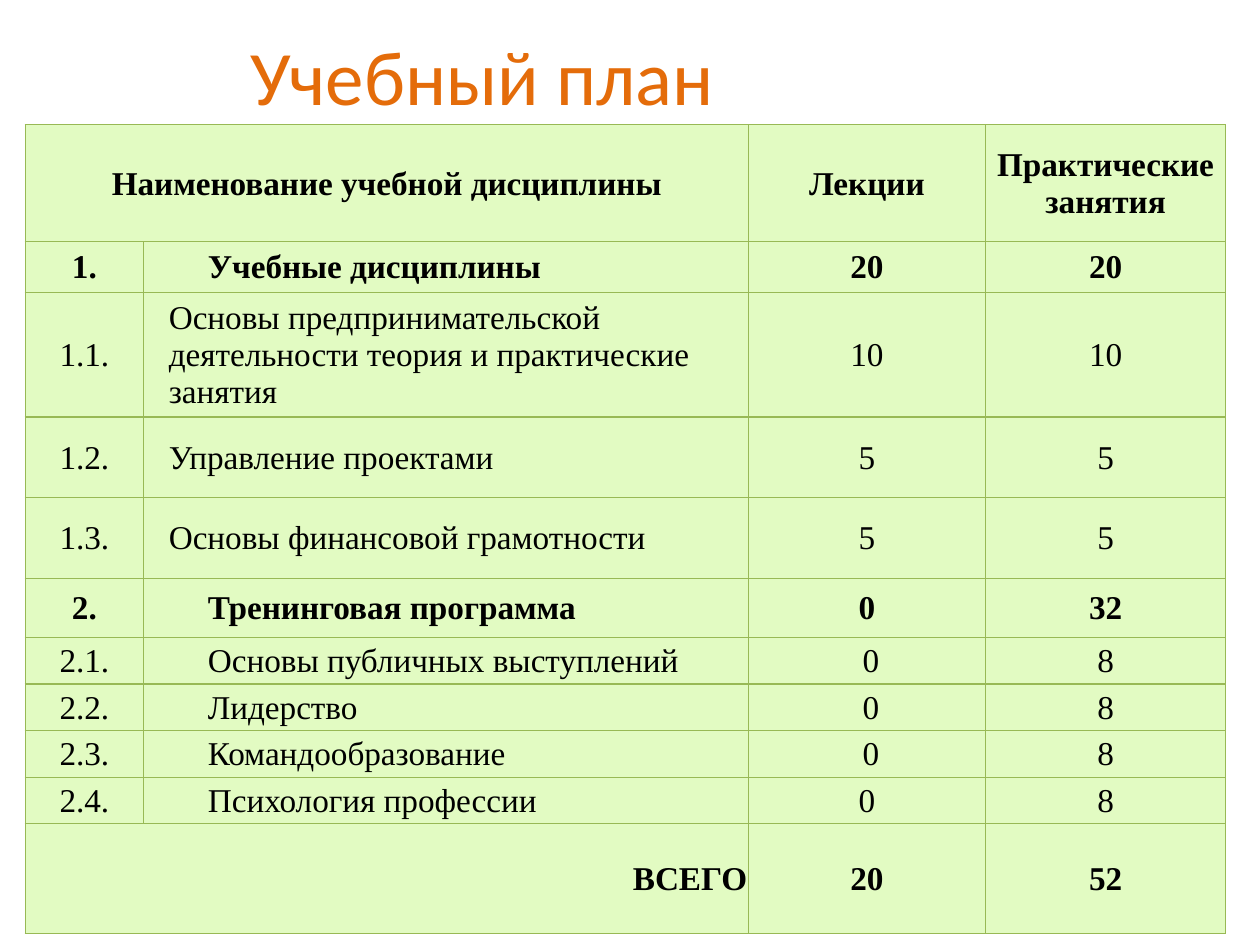
from dataclasses import dataclass

from lxml.etree import SubElement
from pptx import Presentation
from pptx.dml.color import RGBColor
from pptx.enum.text import MSO_ANCHOR, PP_ALIGN
from pptx.oxml.ns import qn
from pptx.util import Inches, Pt


@dataclass(frozen=True)
class Theme:
    title_font: str = "Calibri"
    table_font: str = "Times New Roman"
    title_size: float = 44
    table_size: float = 19
    title_color: str = "E46C0A"
    text_color: str = "000000"
    cell_fill: str = "E2FBC2"
    border_color: str = "98B955"
    border_width: float = 0.75


@dataclass(frozen=True)
class Row:
    number: str
    name: str
    lectures: str
    practice: str
    height: float
    bold: bool = False
    left: float = 0
    first_line: float = 0.5
    align: PP_ALIGN = PP_ALIGN.LEFT

    @property
    def merged(self) -> bool:
        return not self.number


THEME = Theme()
COL_WIDTHS = (0.94, 4.8, 1.88, 1.91)
ROWS = (
    Row("", "Наименование учебной дисциплины", "Лекции", "Практические занятия",
        0.93, True, 0, 0, PP_ALIGN.CENTER),
    Row("1.", "Учебные дисциплины", "20", "20", 0.4, True),
    Row("1.1.", "Основы предпринимательской деятельности теория и практические занятия",
        "10", "10", 0.99, left=0.19, first_line=0),
    Row("1.2.", "Управление проектами", "5", "5", 0.64, left=0.19, first_line=0),
    Row("1.3.", "Основы финансовой грамотности", "5", "5", 0.64, left=0.19, first_line=0),
    Row("2.", "Тренинговая программа", "0", "32", 0.47, True),
    Row("2.1.", "Основы публичных выступлений", " 0", "8", 0.37),
    Row("2.2.", "Лидерство", " 0", "8", 0.37),
    Row("2.3.", "Командообразование", " 0", "8", 0.37),
    Row("2.4.", "Психология профессии", "0", "8", 0.37),
    Row("", "ВСЕГО", "20", "52", 0.87, True, 0, 0, PP_ALIGN.RIGHT),
)


def add_run(p, text: str, font: str, size: float, color: str, bold: bool = False) -> None:
    r = p.add_run()
    r.text = text
    r.font.name = font
    r.font.size = Pt(size)
    r.font.bold = bold
    r.font.color.rgb = RGBColor.from_string(color)


def style_cell(cell) -> None:
    """Set borders before the fill, as the cell schema orders them."""
    tc_pr = cell._tc.get_or_add_tcPr()
    for side in ("lnL", "lnR", "lnT", "lnB"):
        ln = SubElement(tc_pr, qn(f"a:{side}"), w=str(Pt(THEME.border_width)))
        fill = SubElement(ln, qn("a:solidFill"))
        SubElement(fill, qn("a:srgbClr"), val=THEME.border_color)
    cell.fill.solid()
    cell.fill.fore_color.rgb = RGBColor.from_string(THEME.cell_fill)
    cell.margin_left = cell.margin_right = cell.margin_top = Inches(0.01)
    cell.margin_bottom = 0
    cell.vertical_anchor = MSO_ANCHOR.MIDDLE


def write_cell(cell, text: str, bold: bool, align: PP_ALIGN = PP_ALIGN.CENTER,
               left: float = 0, first_line: float = 0) -> None:
    p = cell.text_frame.paragraphs[0]
    p.alignment = align
    p_pr = p._p.get_or_add_pPr()
    p_pr.set("marL", str(Inches(left)))
    p_pr.set("indent", str(Inches(first_line)))
    add_run(p, text, THEME.table_font, THEME.table_size, THEME.text_color, bold)


def add_title(slide, text: str) -> None:
    sp = slide.shapes.title
    sp.left, sp.top, sp.width, sp.height = map(Inches, (0.67, -0.03, 6.32, 1.25))
    tf = sp.text_frame
    tf.vertical_anchor = MSO_ANCHOR.MIDDLE
    p = tf.paragraphs[0]
    p.alignment = PP_ALIGN.CENTER
    add_run(p, text, THEME.title_font, THEME.title_size, THEME.title_color)


def add_plan_table(slide) -> None:
    height = sum(row.height for row in ROWS)
    table = slide.shapes.add_table(
        len(ROWS), len(COL_WIDTHS), Inches(0.2), Inches(0.99),
        Inches(sum(COL_WIDTHS)), Inches(height)).table
    table.first_row = table.horz_banding = False
    for column, width in zip(table.columns, COL_WIDTHS):
        column.width = Inches(width)
    for i, row in enumerate(ROWS):
        table.rows[i].height = Inches(row.height)
        cells = [table.cell(i, j) for j in range(len(COL_WIDTHS))]
        for cell in cells:
            style_cell(cell)
        number, name, lectures, practice = cells
        if row.merged:
            number.merge(name)
            name = number
        else:
            write_cell(number, row.number, row.bold)
        write_cell(name, row.name, row.bold, row.align, row.left, row.first_line)
        write_cell(lectures, row.lectures, row.bold)
        write_cell(practice, row.practice, row.bold)


def main() -> None:
    prs = Presentation()
    prs.slide_width, prs.slide_height = Inches(10), Inches(7.5)
    slide = prs.slides.add_slide(prs.slide_layouts[5])
    add_title(slide, "Учебный план")
    add_plan_table(slide)
    prs.save("out.pptx")


if __name__ == "__main__":
    main()
